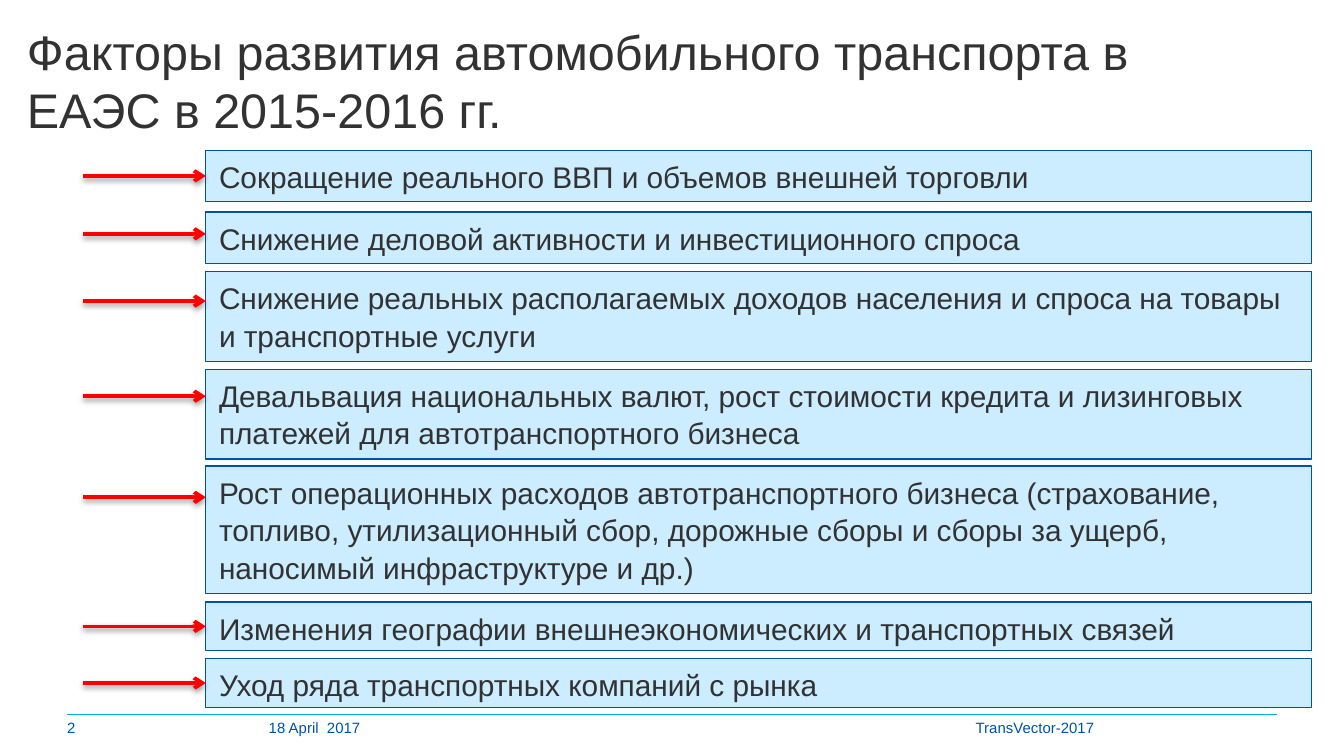
from dataclasses import dataclass

from lxml import etree
from pptx import Presentation, util as u
from pptx.dml.color import RGBColor
from pptx.enum import shapes, text
from pptx.oxml import parse_xml
from pptx.oxml.ns import nsdecls, qn


@dataclass(frozen=True)
class Theme:
    """Colours, font and type sizes of the slide."""
    font: str = "Arial"
    ink: str = "323232"
    blue: str = "0052A4"
    rule: str = "00B1EB"
    panel: str = "CCECFF"
    arrow: str = "FF0000"
    title: int = 26
    body: int = 16
    footer: int = 8


THEME = Theme()
BOX_LEFT, BOX_WIDTH, ARROW_LEFT = 3.89, 20.9, 1.57

# (text, box top, box height, arrow height or None for the middle of the side)
FACTORS = [
    ("Сокращение реального ВВП и объемов внешней торговли", 2.84, 0.97, None),
    ("Снижение деловой активности и инвестиционного спроса", 4.01, 0.97, 4.42),
    ("Снижение реальных располагаемых доходов населения и спроса на товары "
     "и транспортные услуги", 5.13, 1.7, 5.69),
    ("Девальвация национальных валют, рост стоимости кредита и лизинговых "
     "платежей для автотранспортного бизнеса", 6.98, 1.7, 7.49),
    ("Рост операционных расходов автотранспортного бизнеса (страхование, "
     "топливо, утилизационный сбор, дорожные сборы и сборы за ущерб, "
     "наносимый инфраструктуре и др.)", 8.81, 2.41, 9.4),
    ("Изменения географии внешнеэкономических и транспортных связей", 11.38, 0.92, None),
    ("Уход ряда транспортных компаний с рынка", 12.45, 0.92, None),
]
FOOTERS = [("2", 1.27, 3.56), ("18 April  2017", 5.08, 3.81), ("TransVector-2017", 18.44, 5.69)]


def rgb(value):
    """Turn a hex string into a colour."""
    return RGBColor.from_string(value)


def write(tf, content, *, size, color, anchor=text.MSO_ANCHOR.TOP, spacing=None):
    """Put one formatted left-aligned paragraph into a text frame."""
    tf.word_wrap = True
    tf.vertical_anchor = anchor
    p = tf.paragraphs[0]
    p.alignment = text.PP_ALIGN.LEFT
    if spacing:
        p.line_spacing = spacing
    r = p.add_run()
    r.text = content
    r.font.name, r.font.size = THEME.font, u.Pt(size)
    r.font.color.rgb = rgb(color)


def add_label(s, content, left, top, width, height, inset_top=0, **style):
    """Add a text box without side insets."""
    tf = s.shapes.add_textbox(*map(u.Cm, (left, top, width, height))).text_frame
    tf.margin_left = tf.margin_right = tf.margin_bottom = 0
    tf.margin_top = u.Cm(inset_top)
    write(tf, content, **style)


def add_box(s, content, top, height):
    """Add a framed panel holding one factor."""
    sp = s.shapes.add_shape(shapes.MSO_SHAPE.RECTANGLE,
                            *map(u.Cm, (BOX_LEFT, top, BOX_WIDTH, height)))
    sp.shadow.inherit = False
    sp.fill.solid()
    sp.fill.fore_color.rgb = rgb(THEME.panel)
    sp.line.color.rgb = rgb(THEME.blue)
    sp.line.width = u.Pt(0.75)
    write(sp.text_frame, content, size=THEME.body, color=THEME.ink, spacing=1.05)
    sp.text_frame.auto_size = text.MSO_AUTO_SIZE.SHAPE_TO_FIT_TEXT
    return sp


def add_line(s, left, right, y, color, width):
    """Add a horizontal line with an empty effect list and return both."""
    line = s.shapes.add_connector(shapes.MSO_CONNECTOR.STRAIGHT,
                                  *map(u.Cm, (left, y, right, y)))
    line.line.color.rgb = rgb(color)
    line.line.width = u.Pt(width)
    effects = etree.SubElement(line._element.spPr, qn("a:effectLst"))
    return line, effects


def add_arrow(s, box, y):
    """Add a shadowed arrow to a box, joined to its side when y is None."""
    middle = u.Length(box.top + box.height // 2).cm
    line, effects = add_line(s, ARROW_LEFT, BOX_LEFT, middle if y is None else y,
                             THEME.arrow, 2)
    if y is None:
        line.end_connect(box, 1)
    etree.SubElement(line.line._get_or_add_ln(), qn("a:tailEnd"), type="arrow")
    effects.append(parse_xml(
        f'<a:outerShdw {nsdecls("a")} blurRad="{u.Pt(3.1)}" dist="{u.Pt(1.6)}" '
        'dir="5400000" rotWithShape="0"><a:srgbClr val="000000">'
        '<a:alpha val="38000"/></a:srgbClr></a:outerShdw>'))


def main():
    """Build and save the slide."""
    prs = Presentation()
    prs.slide_width, prs.slide_height = u.Cm(25.4), u.Cm(14.29)
    s = prs.slides.add_slide(prs.slide_layouts[6])
    add_line(s, 1.27, 24.13, 13.51, THEME.rule, 0.75)
    add_label(s, "Факторы развития автомобильного транспорта в ЕАЭС в 2015-2016 гг.",
              0.51, 0.28, 21.69, 1.83, inset_top=0.13, size=THEME.title, color=THEME.ink)
    for content, left, width in FOOTERS:
        add_label(s, content, left, 13.51, width, 0.48, size=THEME.footer,
                  color=THEME.blue, anchor=text.MSO_ANCHOR.MIDDLE)
    for content, top, height, arrow_y in FACTORS:
        add_arrow(s, add_box(s, content, top, height), arrow_y)
    prs.save("out.pptx")


if __name__ == "__main__":
    main()
